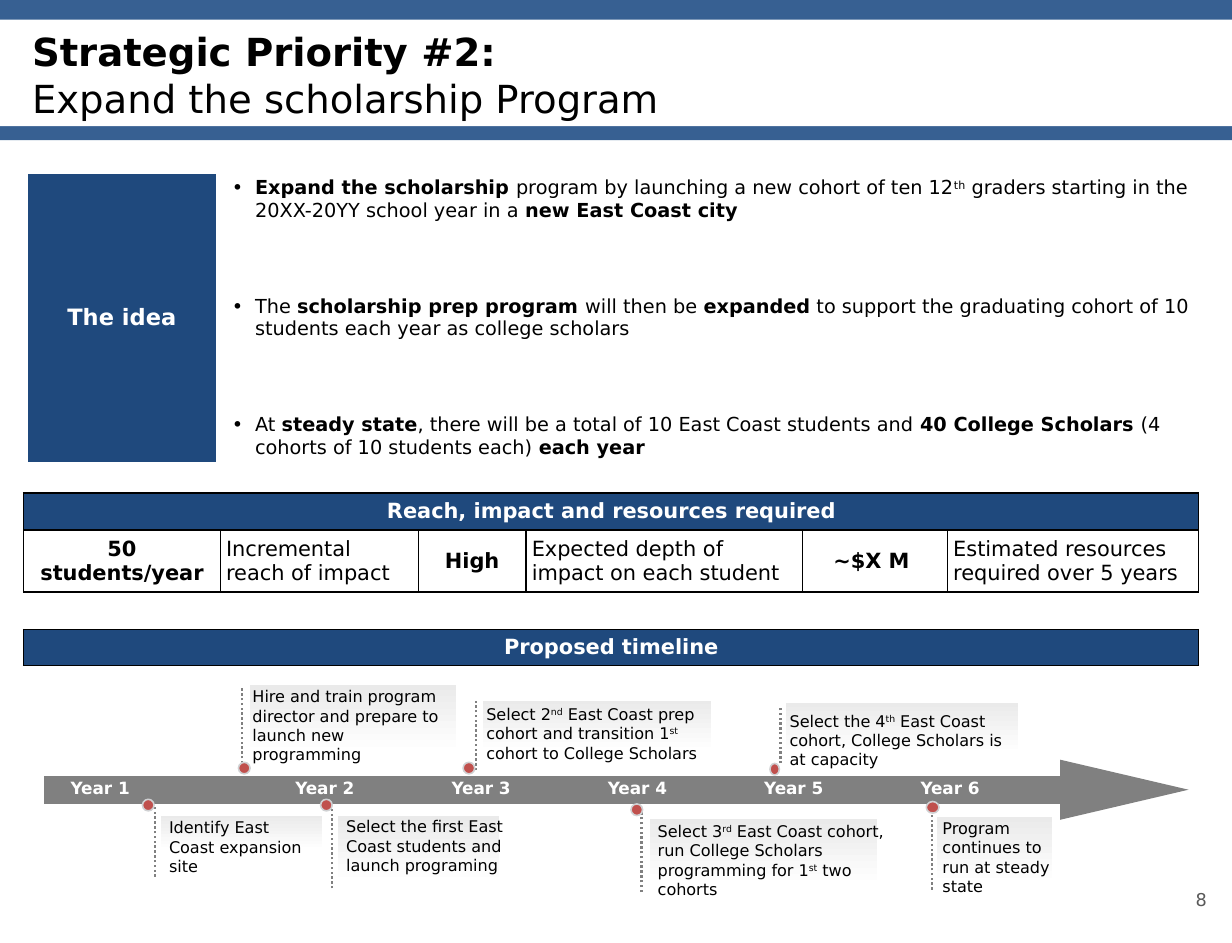
from lxml import etree
from pptx import Presentation
from pptx.dml.color import RGBColor
from pptx.enum.dml import MSO_LINE
from pptx.enum.shapes import MSO_CONNECTOR, MSO_SHAPE
from pptx.enum.text import MSO_ANCHOR, PP_ALIGN
from pptx.oxml.ns import qn
from pptx.util import Pt

RECT, OVAL, EXTRACT = MSO_SHAPE.RECTANGLE, MSO_SHAPE.OVAL, MSO_SHAPE.FLOWCHART_EXTRACT
LEFT, CENTER, RIGHT = PP_ALIGN.LEFT, PP_ALIGN.CENTER, PP_ALIGN.RIGHT
TOP, MIDDLE = MSO_ANCHOR.TOP, MSO_ANCHOR.MIDDLE
STRAIGHT, DOTTED = MSO_CONNECTOR.STRAIGHT, MSO_LINE.ROUND_DOT
FONT = "DejaVu Sans"
NAVY, GREY, BLACK, WHITE = "1F497D", "808080", "000000", "FFFFFF"
rgb = RGBColor.from_string


def add_runs(p, text, size, color=BLACK, align=LEFT):
    """Add text to p; *stars* mark bold and ^carets^ mark superscript."""
    p.alignment = align
    for i, part in enumerate(text.split("*")):
        for j, piece in enumerate(part.split("^")):
            if piece:
                r = p.add_run()
                r.text = piece
                r.font.name, r.font.size = FONT, Pt(size)
                r.font.bold = i % 2 == 1
                r.font.color.rgb = rgb(color)
                if j % 2:
                    r.font._element.set("baseline", "30000")


def add_solid(shapes, kind, x, y, w, h, fill):
    sp = shapes.add_shape(kind, Pt(x), Pt(y), Pt(w), Pt(h))
    sp.shadow.inherit = False
    sp.fill.solid()
    sp.fill.fore_color.rgb = rgb(fill)
    sp.line.fill.background()
    return sp


prs = Presentation()
prs.slide_width, prs.slide_height = Pt(766.1), Pt(586.1)
s = prs.slides.add_slide(prs.slide_layouts[6])

# Title band and timeline arrow
add_solid(s.shapes, RECT, 0, 0, 766.1, 87.1, "376092")
add_solid(s.shapes, RECT, 0, 12.2, 766.1, 66.3, WHITE)
arrow = s.shapes.add_group_shape()
add_solid(arrow.shapes, RECT, 27.4, 482.4, 640.8, 17.3, GREY)
arrow_head = add_solid(arrow.shapes, EXTRACT, 680.4, 450.9, 37.4, 79.9, GREY)
arrow_head.rotation = 90

# Tables: left, top, border colour, border width, column widths, row heights,
# then cells as (row, column, text, size, text colour, fill, align, side inset)
header = (13, WHITE, NAVY, CENTER, 7.2)
figure = (13, BLACK, None, CENTER, 3.6)
meaning = (13, BLACK, None, LEFT, 3.6)
tables = [
    (14.6, 105.4, WHITE, 6, [122.4, 613.4], [184.3], [
        (0, 0, ["*The idea*"], 14, WHITE, NAVY, CENTER, 7.2),
        (0, 1, [
            "*Expand the scholarship *program by launching a new cohort of ten 12^th^ graders "
            "starting in the 20XX-20YY school year in a *new East Coast city*",
            "The *scholarship prep program *will then be *expanded* to support the graduating "
            "cohort of 10 students each year as college scholars",
            "At *steady state*, there will be a total of 10 East Coast students and "
            "*40 College Scholars *(4 cohorts of 10 students each) *each year*",
        ], 12, BLACK, None, LEFT, 7.2),
    ]),
    (14.6, 306.5, BLACK, 1, [122.4, 123.1, 67, 172.1, 90, 156.2], [23, 38.4], [
        (0, 0, ["*Reach, impact and resources required*"], *header),
        (1, 0, ["*50 students/year*"], *figure),
        (1, 1, ["Incremental reach of impact"], *meaning),
        (1, 2, ["*High*"], *figure),
        (1, 3, ["Expected depth of impact on each student"], *meaning),
        (1, 4, ["*~$X M *"], *figure),
        (1, 5, ["Estimated resources required over 5 years"], *meaning),
    ]),
    (14.6, 391.3, BLACK, 1, [730.8], [22.5, 149.6], [
        (0, 0, ["*Proposed timeline*"], *header),
    ]),
]
for x, y, border, border_width, widths, heights, cells in tables:
    table = s.shapes.add_table(len(heights), len(widths), Pt(x), Pt(y),
                               Pt(sum(widths)), Pt(sum(heights))).table
    table.first_row = table.horz_banding = False
    for column, width in zip(table.columns, widths):
        column.width = Pt(width)
    for row, height in zip(table.rows, heights):
        row.height = Pt(height)
    for row, col, paragraphs, size, color, fill, align, inset in cells:
        cell = table.cell(row, col)
        cell.vertical_anchor = MIDDLE
        cell.margin_left = cell.margin_right = Pt(inset)
        for i, text in enumerate(paragraphs):
            p = cell.text_frame.paragraphs[0] if i == 0 else cell.text_frame.add_paragraph()
            add_runs(p, text, size, color, align)
            if len(paragraphs) > 1:
                p.space_before = Pt(45.4 if i else 0)
                pPr = p._p.get_or_add_pPr()
                pPr.set("marL", str(Pt(14.4)))
                pPr.set("indent", str(-Pt(14.4)))
                etree.SubElement(pPr, qn("a:buFont")).set("typeface", FONT)
                etree.SubElement(pPr, qn("a:buChar")).set("char", "•")
        if fill:
            cell.fill.solid()
            cell.fill.fore_color.rgb = rgb(fill)
    if len(widths) > 1 and len(heights) > 1:
        table.cell(0, 0).merge(table.cell(0, len(widths) - 1))
    text_rows = {cell[0] for cell in cells}
    for n, row in enumerate(table.rows):
        for cell in row.cells:
            tcPr = cell._tc.get_or_add_tcPr()
            if tcPr.find(qn("a:solidFill")) is None:
                cell.fill.background()
            for i, side in enumerate(("lnL", "lnR", "lnT", "lnB")):
                ln = etree.Element(qn("a:" + side), w=str(Pt(border_width)))
                if n in text_rows or side == "lnT":
                    line_fill = etree.SubElement(ln, qn("a:solidFill"))
                    etree.SubElement(line_fill, qn("a:srgbClr"), val=border)
                else:
                    etree.SubElement(ln, qn("a:noFill"))
                tcPr.insert(i, ln)

# Title, page number and year labels
year_lefts = [39.6] + [179.3 + 97.2 * i for i in range(5)]
labels = [
    (12.8, 13.9, 740.9, 65.5, ["*Strategic Priority #2:*", "Expand the scholarship Program"],
     24, BLACK, LEFT, TOP, True),
    (585.4, 543.6, 172.1, 31, ["8"], 11, "595959", RIGHT, MIDDLE, True),
]
labels += [(x, 480.2, 45.4, 19.4, [f"*Year {n}*"], 10.5, WHITE, CENTER, MIDDLE, False)
           for n, x in enumerate(year_lefts, 1)]
for x, y, w, h, paragraphs, size, color, align, anchor, wrap in labels:
    tf = s.shapes.add_textbox(Pt(x), Pt(y), Pt(w), Pt(h)).text_frame
    tf.word_wrap, tf.vertical_anchor = wrap, anchor
    if not wrap:
        tf.margin_left = tf.margin_right = Pt(3.6)
    for i, text in enumerate(paragraphs):
        p = tf.paragraphs[0] if i == 0 else tf.add_paragraph()
        add_runs(p, text, size, color, align)

# Milestones: shaded box, dotted line (x, top, bottom), text box, dot (x, y, width), text
milestones = [
    ((99.4, 506.2, 101.5, 22.3), (96.5, 501.8, 545), (101.5, 504.7, 99.4, 43.9),
     (88.6, 496.8, 7.2), "Identify East Coast expansion site"),
    ((209.5, 506.2, 101.5, 42.5), (206.6, 501.8, 552.2), (211.7, 504, 105.8, 55.4),
     (199.4, 496.8, 7.2), "Select the first East Coast students and launch programing"),
    ((488.2, 436.3, 145.4, 32.4), (485.3, 438.5, 474.5), (487.4, 438.5, 144.7, 43.9),
     (478.8, 474.5, 5.8), "Select the 4^th^ East Coast cohort, College Scholars is at capacity"),
    ((154.8, 424.8, 129.6, 43.2), (150.5, 427, 477.4), (153.4, 423.2, 130.3, 55.4),
     (148.3, 473.8, 7.2), "Hire and train program director and prepare to launch new programming"),
    ((299.5, 434.9, 143.3, 32.4), (295.9, 435.6, 478.8), (298.8, 434.2, 143.3, 43.9),
     (288, 473.8, 7.2),
     "Select 2^nd^ East Coast prep cohort and transition 1^st^ cohort to College Scholars"),
    ((403.2, 508.3, 142.6, 42.5), (398.9, 504, 554.4), (405.4, 506.9, 149, 55.4),
     (392.4, 499.7, 7.2),
     "Select 3^rd^ East Coast cohort, run College Scholars programming for 1^st^ two cohorts"),
    ((581.8, 506.9, 73.4, 42.5), (579.6, 502.6, 553), (582.5, 505.2, 76.3, 67.7),
     (576, 498.2, 7.9), "Program continues to run at steady state"),
]
for box, (line_x, line_top, line_bottom), text_box, (dot_x, dot_y, dot_w), text in milestones:
    shapes = s.shapes.add_group_shape().shapes
    shade = add_solid(shapes, RECT, *box, WHITE)
    shade.fill.gradient()
    shade.fill.gradient_angle = 270
    for stop, color in zip(shade.fill.gradient_stops, ("EAEAEA", WHITE)):
        stop.color.rgb = rgb(color)
    shade.line.color.rgb, shade.line.width = rgb(WHITE), Pt(1.5)

    stem = shapes.add_connector(STRAIGHT, Pt(line_x), Pt(line_bottom), Pt(line_x), Pt(line_top))
    stem.line.color.rgb, stem.line.width = rgb(GREY), Pt(1.5)
    stem.line.dash_style = DOTTED
    etree.SubElement(stem._element.spPr, qn("a:effectLst"))

    tf = shapes.add_textbox(*map(Pt, text_box)).text_frame
    tf.word_wrap = True
    tf.margin_left = tf.margin_right = Pt(3.6)
    add_runs(tf.paragraphs[0], text, 10)

    dot = add_solid(shapes, OVAL, dot_x, dot_y, dot_w, 7.2, "C0504D")
    dot.line.color.rgb, dot.line.width = rgb("D0D1D3"), Pt(1)

prs.save("out.pptx")
